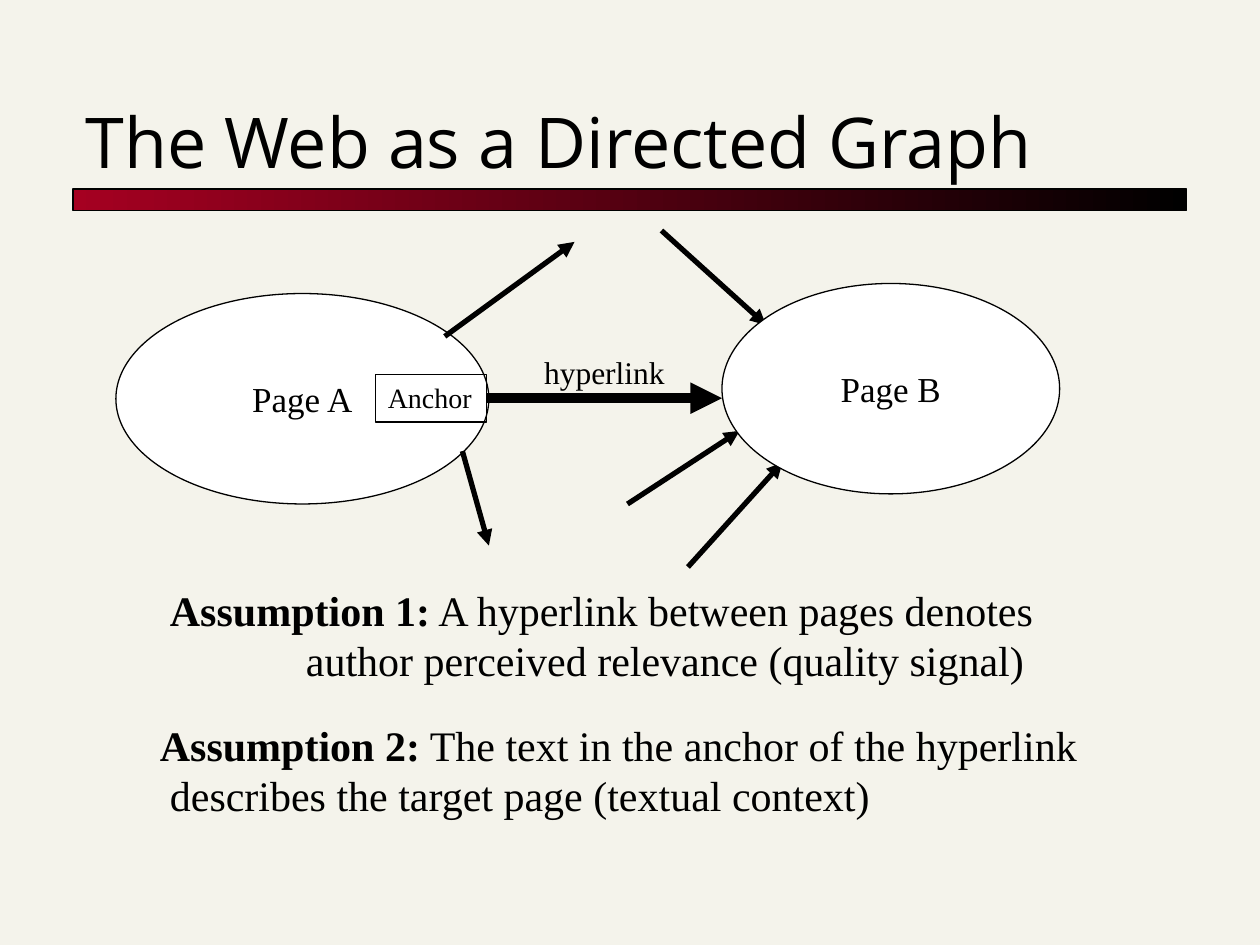
from typing import NamedTuple

from lxml import etree
from pptx import Presentation
from pptx.dml.color import RGBColor
from pptx.enum import shapes, text
from pptx.oxml import ns
from pptx.util import Inches, Pt

BLACK = RGBColor(0x00, 0x00, 0x00)
WHITE = RGBColor(0xFF, 0xFF, 0xFF)
CREAM = RGBColor(0xF4, 0xF3, 0xEB)
CRIMSON = RGBColor(0xA5, 0x00, 0x21)
SERIF = "Times New Roman"
SANS = "Open Sans"


class Box(NamedTuple):
    left: float
    top: float
    width: float
    height: float

    def lengths(self) -> list:
        return [Inches(value) for value in self]


class Page(NamedTuple):
    label: str
    box: Box


class Arrow(NamedTuple):
    start: tuple
    end: tuple
    weight: float = 3


class Assumption(NamedTuple):
    heading: str
    lines: tuple
    box: Box
    hanging: float


PAGES = [
    Page("Page A", Box(0.92, 2.33, 2.96, 1.67)),
    Page("Page B", Box(5.73, 2.25, 2.68, 1.67)),
]
LINKS = [
    Arrow((3.67, 3.58), (3.88, 4.33)),
    Arrow((3.53, 2.67), (4.56, 1.92)),
    Arrow((4.98, 4.0), (5.87, 3.42)),
    Arrow((5.46, 4.5), (6.21, 3.67)),
    Arrow((5.25, 1.83), (6.08, 2.58)),
]
HYPERLINK = Arrow((3.86, 3.16), (5.73, 3.16), 6)
ASSUMPTIONS = [
    Assumption(
        "Assumption 1:",
        (" A hyperlink between pages denotes",
         "author perceived relevance (quality signal)"),
        Box(1.25, 4.59, 8.08, 0.9), 1.08),
    Assumption(
        "Assumption 2:",
        (" The text in the anchor of the hyperlink",
         "describes the target page (textual context)"),
        Box(1.17, 5.66, 8.42, 0.91), 0.08),
]


def format_font(font, size: float, name: str = SERIF,
                bold: bool = False) -> None:
    values = {"size": Pt(size), "name": name, "bold": bold}
    for attribute, value in values.items():
        setattr(font, attribute, value)
    font.color.rgb = BLACK


def write(shape, wording: str, size: float, name: str = SERIF,
          align=text.PP_ALIGN.LEFT, anchor=text.MSO_ANCHOR.TOP,
          wrap: bool = False) -> None:
    frame = shape.text_frame
    values = {"auto_size": text.MSO_AUTO_SIZE.NONE, "word_wrap": wrap,
              "vertical_anchor": anchor}
    for attribute, value in values.items():
        setattr(frame, attribute, value)
    paragraph = frame.paragraphs[0]
    paragraph.alignment = align
    run = paragraph.add_run()
    run.text = wording
    format_font(run.font, size, name)


def add_outlined(slide, kind, box: Box):
    shape = slide.shapes.add_shape(kind, *box.lengths())
    shape.shadow.inherit = False
    shape.line.color.rgb = BLACK
    shape.line.width = Pt(0.75)
    return shape


def add_page(slide, page: Page) -> None:
    shape = add_outlined(slide, shapes.MSO_SHAPE.OVAL, page.box)
    shape.fill.solid()
    shape.fill.fore_color.rgb = WHITE
    write(shape, page.label, 20, align=text.PP_ALIGN.CENTER,
          anchor=text.MSO_ANCHOR.MIDDLE)


def add_arrow(slide, arrow: Arrow):
    connector = slide.shapes.add_connector(
        shapes.MSO_CONNECTOR.STRAIGHT,
        *(Inches(value) for value in arrow.start + arrow.end))
    connector.line.color.rgb = BLACK
    connector.line.width = Pt(arrow.weight)
    # Arrowhead at the end, and no theme shadow
    outline = connector.line._get_or_add_ln()
    etree.SubElement(outline, ns.qn("a:tailEnd"), type="triangle")
    etree.SubElement(connector._element.spPr, ns.qn("a:effectLst"))
    return connector


def add_assumption(slide, assumption: Assumption) -> None:
    box = slide.shapes.add_textbox(*assumption.box.lengths())
    box.text_frame.word_wrap = True
    paragraph = box.text_frame.paragraphs[0]
    # Hanging indent for the second line
    properties = paragraph._p.get_or_add_pPr()
    properties.set("marL", str(Inches(assumption.hanging)))
    properties.set("indent", str(-Inches(assumption.hanging)))
    first, second = assumption.lines
    for wording, bold in ((assumption.heading, True), (first, False)):
        run = paragraph.add_run()
        run.text = wording
        format_font(run.font, 24, bold=bold)
    paragraph.add_line_break()
    run = paragraph.add_run()
    run.text = second
    format_font(run.font, 24)


def main() -> None:
    presentation = Presentation()
    presentation.slide_width = Inches(10)
    presentation.slide_height = Inches(7.5)
    slide = presentation.slides.add_slide(presentation.slide_layouts[5])
    slide.background.fill.solid()
    slide.background.fill.fore_color.rgb = CREAM

    # Gradient rule under the title
    rule = add_outlined(slide, shapes.MSO_SHAPE.RECTANGLE,
                        Box(0.58, 1.5, 8.84, 0.17))
    rule.fill.gradient()
    rule.fill.gradient_angle = 0
    for stop, color in zip(rule.fill.gradient_stops, (CRIMSON, BLACK)):
        stop.color.rgb = color

    # Title
    title = slide.shapes.title
    title.left, title.top, title.width, title.height = Box(
        0.58, 0.42, 8.83, 1.08).lengths()
    write(title, "The Web as a Directed Graph", 40, SANS,
          anchor=text.MSO_ANCHOR.BOTTOM, wrap=True)

    # Assumptions
    for assumption in ASSUMPTIONS:
        add_assumption(slide, assumption)

    # Pages and the links between them
    page_a, page_b = PAGES
    add_page(slide, page_a)
    label = slide.shapes.add_textbox(*Box(4.22, 2.75, 1.16, 0.4).lengths())
    write(label, "hyperlink", 18)
    for link in LINKS:
        add_arrow(slide, link)
    add_page(slide, page_b)

    # Anchor and its hyperlink
    anchor = add_outlined(slide, shapes.MSO_SHAPE.RECTANGLE,
                          Box(2.98, 2.97, 0.88, 0.38))
    anchor.fill.background()
    write(anchor, "Anchor", 16)
    add_arrow(slide, HYPERLINK).begin_connect(anchor, 3)

    presentation.save("out.pptx")


if __name__ == "__main__":
    main()
